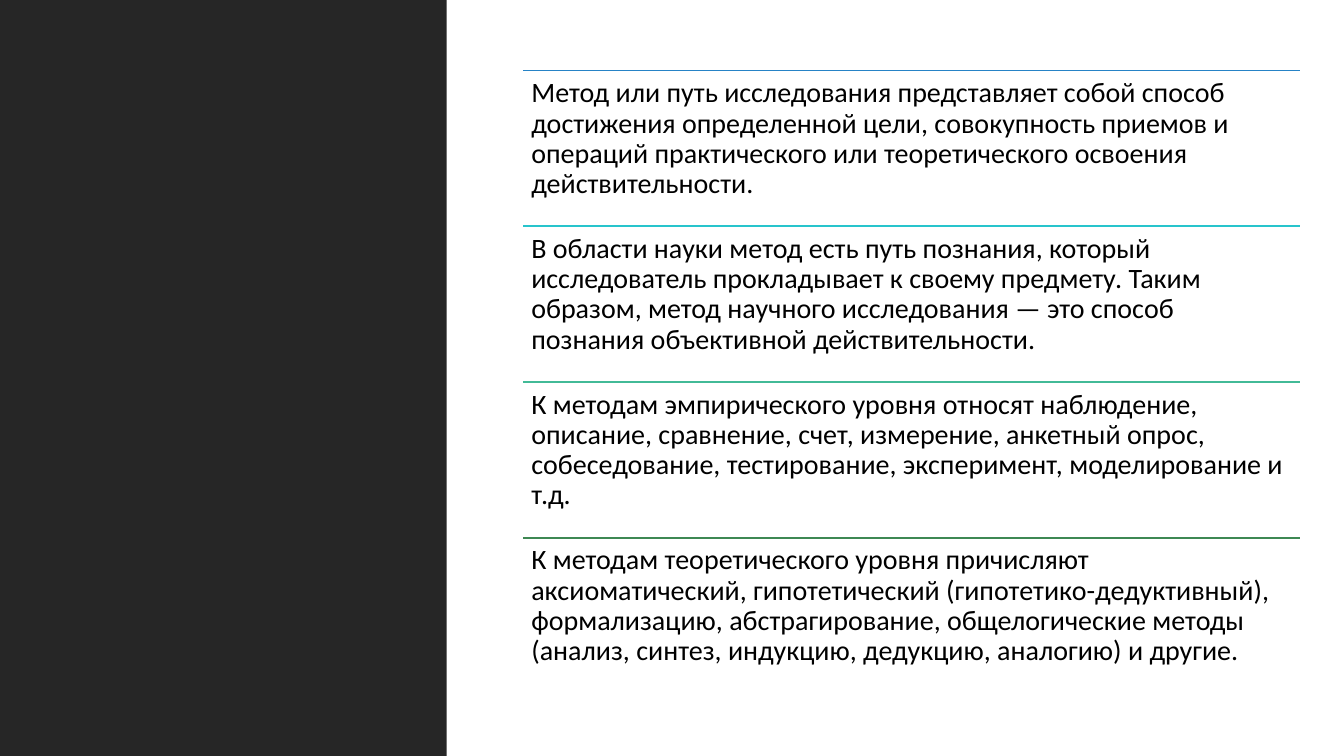
from lxml.etree import SubElement
from pptx import Presentation
from pptx.dml.color import RGBColor
from pptx.enum.shapes import MSO_CONNECTOR as Conn, MSO_SHAPE as Shape
from pptx.enum.text import MSO_ANCHOR as Anchor
from pptx.oxml.ns import qn
from pptx.util import Inches, Pt

METHODS = [
    ("2683C6", "Метод или путь исследования представляет собой способ достижения "
               "определенной цели, совокупность приемов и операций практического "
               "или теоретического освоения действительности."),
    ("28C4CC", "В области науки метод есть путь познания, который исследователь "
               "прокладывает к своему предмету. Таким образом, метод научного "
               "исследования — это способ познания объективной действительности."),
    ("42BA97", "К методам эмпирического уровня относят наблюдение, описание, "
               "сравнение, счет, измерение, анкетный опрос, собеседование, "
               "тестирование, эксперимент, моделирование и т.д."),
    ("3E8853", "К методам теоретического уровня причисляют аксиоматический, "
               "гипотетический (гипотетико-дедуктивный), формализацию, "
               "абстрагирование, общелогические методы (анализ, синтез, индукцию, "
               "дедукцию, аналогию) и другие."),
]


def color(code):
    return RGBColor.from_string(code)


def write(frame, text, size=20, font="Calibri", ink="000000", spacing=0.9):
    para = frame.paragraphs[0]
    para.line_spacing = spacing
    run = para.add_run()
    run.text = text
    run.font.size = Pt(size)
    run.font.name = font
    run.font.color.rgb = color(ink)


class Deck:
    dark = "262626"
    inset = 0.08
    weight = 1.25

    def __init__(self, slide):
        self.slide = slide
        self.shapes = slide.shapes

    def back(self, fill):
        paint = self.slide.background.fill
        paint.solid()
        paint.fore_color.rgb = color(fill)

    def panel(self, left, top, width, height, fill):
        box = self.shapes.add_shape(Shape.RECTANGLE, Inches(left), Inches(top),
                                    Inches(width), Inches(height))
        box.shadow.inherit = False
        box.fill.solid()
        box.fill.fore_color.rgb = color(fill)
        box.line.fill.background()

    def rule(self, left, top, width, ink):
        line = self.shapes.add_connector(Conn.STRAIGHT, Inches(left), Inches(top),
                                         Inches(left + width), Inches(top))
        line.line.color.rgb = color(ink)
        line.line.width = Pt(self.weight)
        SubElement(line._element.spPr, qn("a:effectLst"))

    def text(self, left, top, width, height, words):
        box = self.shapes.add_textbox(Inches(left), Inches(top),
                                      Inches(width), Inches(height))
        frame = box.text_frame
        frame.word_wrap = True
        frame.vertical_anchor = Anchor.TOP
        frame.margin_left = frame.margin_right = Inches(self.inset)
        frame.margin_top = frame.margin_bottom = Inches(self.inset)
        write(frame, words)


def main():
    show = Presentation()
    show.slide_width, show.slide_height = Inches(13.33), Inches(7.5)
    deck = Deck(show.slides.add_slide(show.slide_layouts[6]))

    # Background and dark side panel
    deck.back("FFFFFF")
    deck.panel(0, 0, 4.43, 7.5, deck.dark)

    # Ruled list of methods, four equal rows
    left, top, width = 5.19, 0.7, 7.7
    step = 6.18 / len(METHODS)
    for row, (ink, words) in enumerate(METHODS):
        y = top + row * step
        deck.rule(left, y, width, ink)
        deck.text(left, y, width, step, words)

    show.save("out.pptx")


if __name__ == "__main__":
    main()
